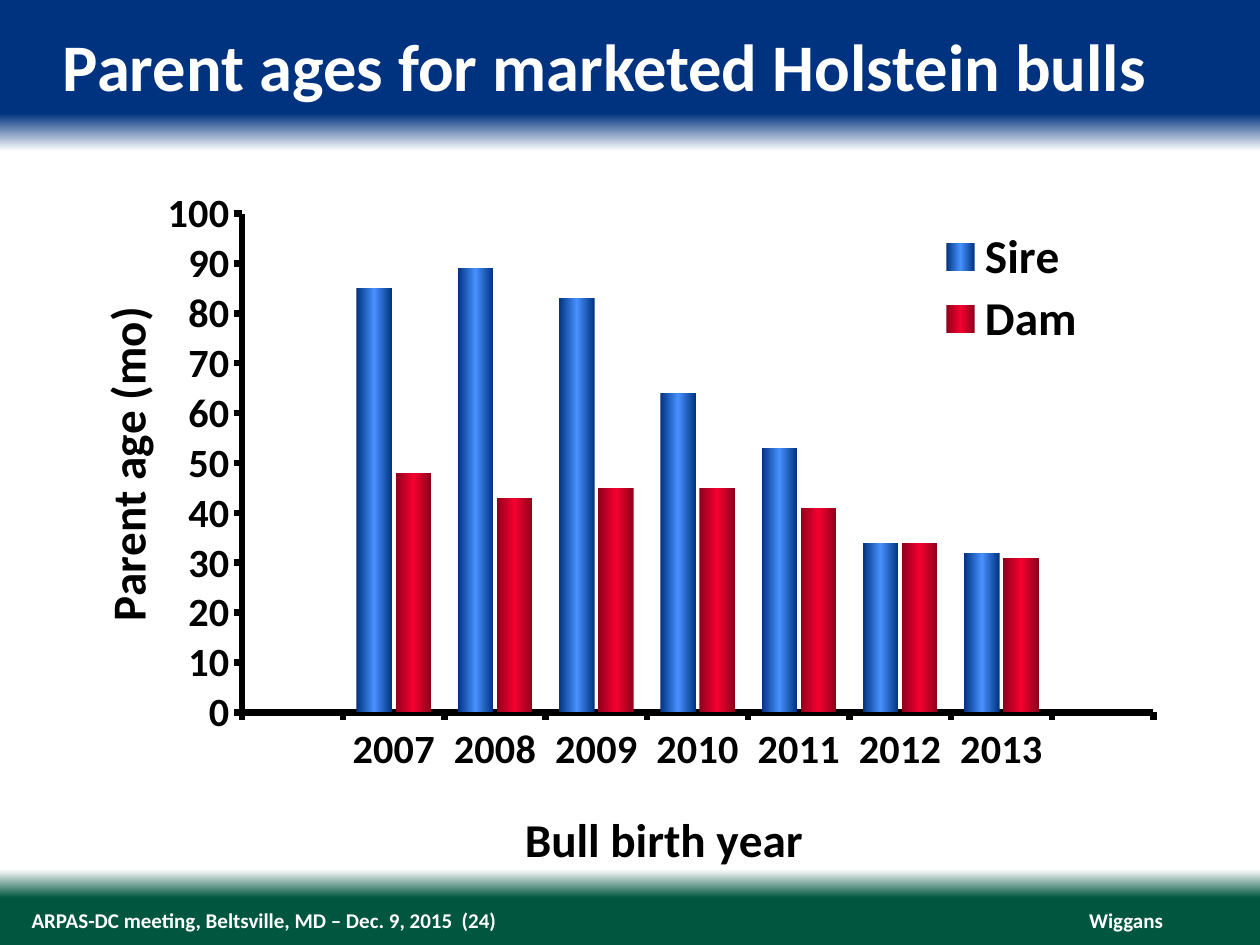
from dataclasses import dataclass

from lxml import etree
from pptx import Presentation
from pptx.chart.data import CategoryChartData
from pptx.dml.color import RGBColor
from pptx.enum.chart import XL_CHART_TYPE, XL_LEGEND_POSITION, XL_TICK_MARK
from pptx.enum.text import MSO_ANCHOR, PP_ALIGN
from pptx.oxml.ns import qn
from pptx.util import Inches, Pt

COLUMNS = XL_CHART_TYPE.COLUMN_CLUSTERED
LEGEND_RIGHT = XL_LEGEND_POSITION.RIGHT
TICK_OUTSIDE, TICK_NONE = XL_TICK_MARK.OUTSIDE, XL_TICK_MARK.NONE
TOP, MIDDLE = MSO_ANCHOR.TOP, MSO_ANCHOR.MIDDLE
LEFT, RIGHT = PP_ALIGN.LEFT, PP_ALIGN.RIGHT


@dataclass(frozen=True)
class Theme:
    font: str = "Calibri"
    white: str = "FFFFFF"
    black: str = "000000"
    navy: str = "00337F"
    green: str = "00563F"
    blue: str = "4791FF"
    dark_red: str = "8E001B"
    red: str = "F6002F"
    title_size: float = 38
    label_size: float = 27
    tick_size: float = 23
    footer_size: float = 12
    axis_width: float = 3.75


theme = Theme()


def set_gradient(fill, owner, stops, angle):
    """Give the fill inside the owner element stops of (percent, colour)."""
    fill.gradient()
    gradient = owner.find(".//" + qn("a:gradFill"))
    stop_list = gradient.find(qn("a:gsLst"))
    for stop in list(stop_list):
        stop_list.remove(stop)
    for percent, color in stops:
        stop = etree.SubElement(stop_list, qn("a:gs"), pos=str(percent * 1000))
        etree.SubElement(stop, qn("a:srgbClr"), val=color)
    gradient.find(qn("a:lin")).set("ang", str(angle * 60000))


def set_layout(element, inner=False, **shares):
    """Place a chart part by x, y, w, h as shares of the chart's size."""
    for old_layout in element.findall(qn("c:layout")):
        element.remove(old_layout)
    layout = etree.Element(qn("c:layout"))
    manual = etree.SubElement(layout, qn("c:manualLayout"))
    if inner:
        etree.SubElement(manual, qn("c:layoutTarget"), val="inner")
    for key in ("xMode", "yMode"):
        etree.SubElement(manual, qn("c:" + key), val="edge")
    for key, share in shares.items():
        etree.SubElement(manual, qn("c:" + key), val=str(share))
    overlay = element.find(qn("c:overlay"))
    if overlay is None:
        element.insert(0, layout)
    else:
        overlay.addprevious(layout)


presentation = Presentation()
presentation.slide_width, presentation.slide_height = Inches(10), Inches(7.5)
width, height = presentation.slide_width, presentation.slide_height
slide = presentation.slides.add_slide(presentation.slide_layouts[6])

# Background with a navy header band and a green footer band
set_gradient(
    slide.background.fill,
    slide.element,
    [(0, theme.navy), (12, theme.navy), (16, theme.white),
     (92, theme.white), (95, theme.green), (100, theme.green)],
    90,
)

# Column chart
chart_data = CategoryChartData()
chart_data.categories = ["", *map(str, range(2007, 2014)), ""]
chart_data.add_series("Sire", [None, 85, 89, 83, 64, 53, 34, 32, None])
chart_data.add_series("Dam", [None, 48, 43, 45, 45, 41, 34, 31, None])
chart = slide.shapes.add_chart(
    COLUMNS, int(width * 0.031), int(height * 0.1333),
    int(width * 0.947), int(height * 0.8027), chart_data,
).chart
chart.has_title = False
chart.font.name = theme.font
chart.font.size = Pt(theme.tick_size)
chart.font.bold = True
chart.font.color.rgb = RGBColor.from_string(theme.black)

plot = chart.plots[0]
plot.gap_width, plot.overlap, plot.vary_by_categories = 75, -10, False
series_colors = [(theme.navy, theme.blue), (theme.dark_red, theme.red)]
for series, (edge, center) in zip(plot.series, series_colors):
    series.invert_if_negative = False
    set_gradient(series.format.fill, series._element,
                 [(0, edge), (50, center), (100, edge)], 0)
set_layout(chart._chartSpace.find(".//" + qn("c:plotArea")), inner=True,
           x=0.17, y=0.116, w=0.764, h=0.66)

axes = [
    (chart.category_axis, "Bull birth year", 0, 0.4, 0.89),
    (chart.value_axis, "Parent age (mo)", -90, 0.04, 0.23),
]
for axis, label, rotation, x, y in axes:
    axis.has_major_gridlines = False
    axis.major_tick_mark, axis.minor_tick_mark = TICK_OUTSIDE, TICK_NONE
    axis.tick_labels.font.size = Pt(theme.tick_size)
    axis.tick_labels.font.bold = True
    axis.format.line.width = Pt(theme.axis_width)
    axis.format.line.color.rgb = RGBColor.from_string(theme.black)
    run = axis.axis_title.text_frame.paragraphs[0].add_run()
    run.text = label
    run.font.name = theme.font
    run.font.size = Pt(theme.label_size)
    run.font.bold = True
    run.font.color.rgb = RGBColor.from_string(theme.black)
    title_element = axis.axis_title._element
    body = title_element.find(".//" + qn("a:bodyPr"))
    body.set("rot", str(rotation * 60000))
    body.set("vert", "horz")
    set_layout(title_element, x=x, y=y)
chart.value_axis.minimum_scale = 0
chart.value_axis.maximum_scale = 100
chart.value_axis.major_unit = 10

chart.has_legend = True
legend = chart.legend
legend.position = LEGEND_RIGHT
legend.include_in_layout = False
legend.font.name = theme.font
legend.font.size = Pt(theme.label_size)
legend.font.bold = True
legend.font.color.rgb = RGBColor.from_string(theme.black)
set_layout(legend._element, x=0.73, y=0.13, w=0.17, h=0.17)

# Title and footer: text, size, alignment, anchor, wrap, box in slide shares
texts = [
    ("Parent ages for marketed Holstein bulls", theme.title_size,
     LEFT, TOP, True, (0.05, 0.0267, 0.9, 0.088)),
    ("ARPAS-DC meeting, Beltsville, MD – Dec. 9, 2015  (24)", theme.footer_size,
     LEFT, MIDDLE, True, (0.025, 0.96, 0.522, 0.0267)),
    ("Wiggans", theme.footer_size,
     RIGHT, MIDDLE, False, (0.864, 0.96, 0.059, 0.0267)),
]
for text, size, alignment, anchor, wrap, (x, y, w, h) in texts:
    text_box = slide.shapes.add_textbox(
        int(width * x), int(height * y), int(width * w), int(height * h))
    frame = text_box.text_frame
    frame.margin_left = frame.margin_right = 0
    frame.margin_top = frame.margin_bottom = 0
    frame.word_wrap = wrap
    frame.vertical_anchor = anchor
    paragraph = frame.paragraphs[0]
    paragraph.alignment = alignment
    run = paragraph.add_run()
    run.text = text
    run.font.name = theme.font
    run.font.size = Pt(size)
    run.font.bold = True
    run.font.color.rgb = RGBColor.from_string(theme.white)

presentation.save("out.pptx")
